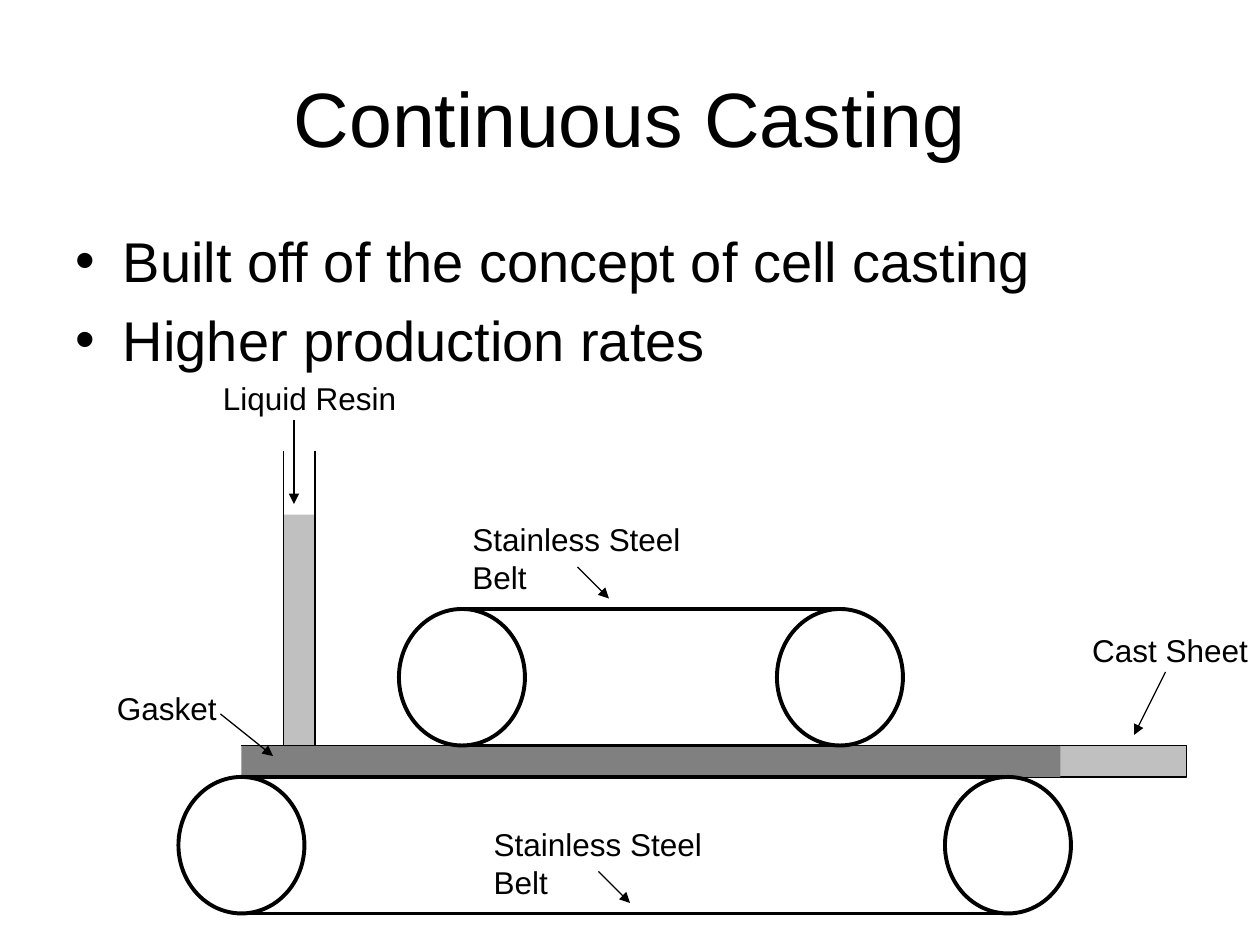
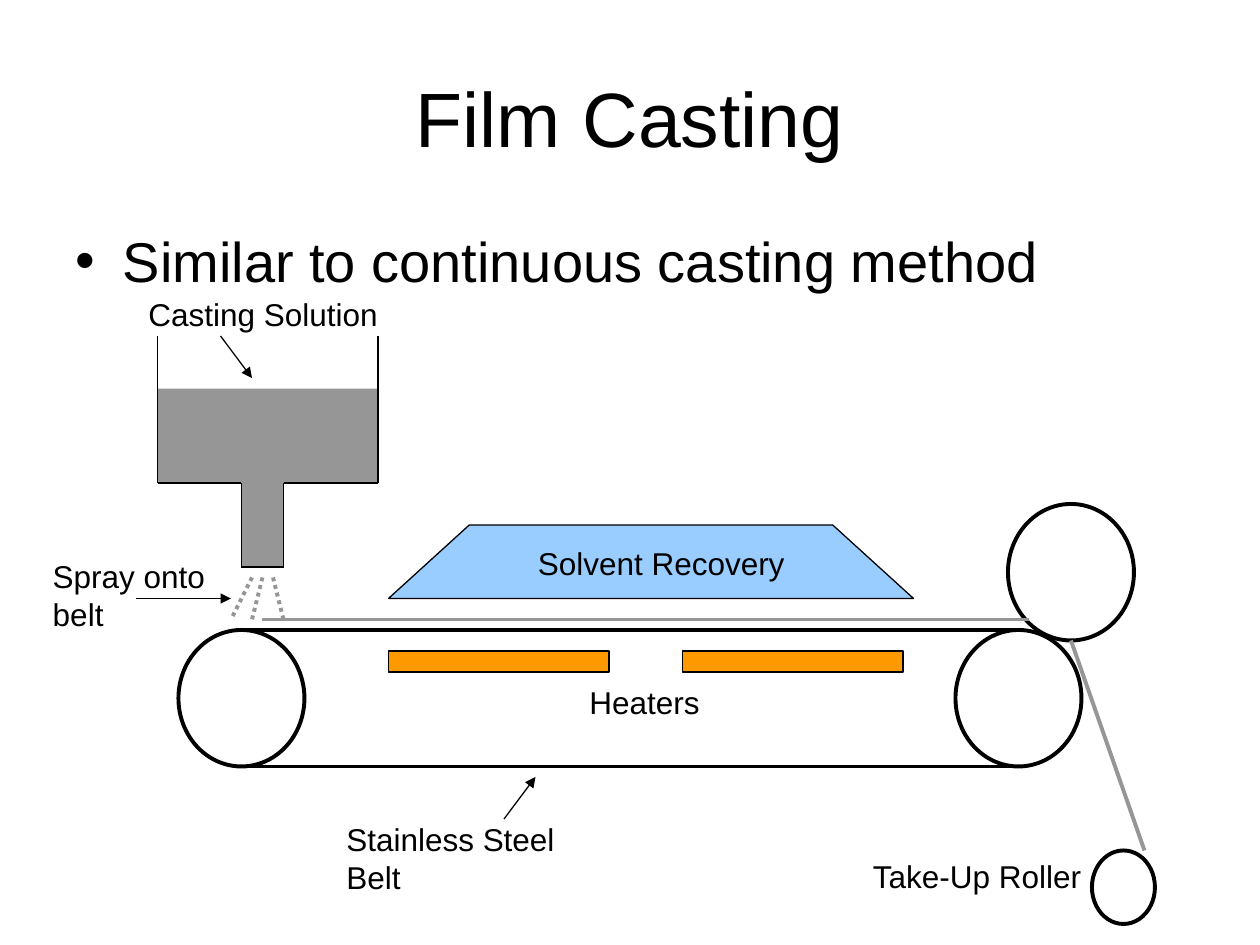
"""Build two slides on continuous casting and film casting of plastic sheet."""
from itertools import pairwise

from lxml import etree
from pptx import Presentation
from pptx.dml.color import RGBColor
from pptx.enum.dml import MSO_LINE
from pptx.enum.shapes import MSO_CONNECTOR, MSO_SHAPE
from pptx.enum.text import MSO_ANCHOR, MSO_AUTO_SIZE, PP_ALIGN
from pptx.oxml.ns import qn
from pptx.util import Emu, Inches, Pt

COLORS = {"ink": "000000", "resin": "C0C0C0", "gasket": "808080",
          "solution": "969696", "heater": "FF9900", "hood": "99CCFF"}
FONT = "Arial"
SLIDE_SIZE = (10, 7.5)
TITLE_BOX, BODY_BOX = (0.5, 0.3, 9, 1.25), (0.5, 1.75, 9, 4.95)
GRID = Inches(1) / 12
THIN, THICK = 0.75, 2.25
ROLLER = (12, 13)
HEATER = (21, 2)

# Diagram parts are in grid units (twelfths of an inch); labels are in inches.
SLIDES = [
    {
        "title": "Continuous Casting",
        "bullets": ["Built off of the concept of cell casting", "Higher production rates"],
        "blocks": [(96, 71, 17, 3, "resin", 1), (23, 71, 78, 3, "gasket", 0),
                   (27, 49, 3, 22, "resin", 0)],
        "rollers": [(17, 74, *ROLLER), (90, 74, *ROLLER),
                    (74, 58, *ROLLER), (38, 58, *ROLLER)],
        "belts": [[(44, 58), (80, 58)], [(44, 71), (80, 71)],
                  [(23, 74), (96, 74)], [(23, 87), (96, 87)]],
        "walls": [[(27, 71), (27, 43)], [(30, 71), (30, 43)], [(23, 71), (101, 71)]],
        "arrows": [[(28, 40), (28, 48)], [(21, 68), (26, 72)], [(55, 54), (58, 57)],
                   [(57, 83), (60, 86)], [(111, 64), (108, 70)]],
        "labels": [("Gasket", 0.83, 5.42, 0.99), ("Liquid Resin", 1.67, 2.96, 1.58),
                   ("Stainless Steel Belt", 3.65, 4.08, 2.35),
                   ("Stainless Steel Belt", 3.82, 6.5, 2.35),
                   ("Cast Sheet", 8.57, 4.96, 1.44)],
    },
    {
        "title": "Film Casting",
        "bullets": ["Similar to continuous casting method"],
        "blocks": [(15, 37, 21, 9, "solution", 0), (23, 46, 4, 8, "solution", 0),
                   (37, 62, *HEATER, "heater", THIN), (65, 62, *HEATER, "heater", THIN)],
        "rollers": [(17, 60, *ROLLER), (91, 60, *ROLLER), (96, 48, *ROLLER), (104, 81, 6, 7)],
        "belts": [[(23, 60), (97, 60)], [(23, 73), (97, 73)]],
        "film": [[(25, 59), (98, 59)], [(102, 61), (109, 81)]],
        "walls": [[(15, 32), (15, 46), (23, 46), (23, 54),
                   (27, 54), (27, 46), (36, 46), (36, 32)]],
        "spray": [[(24, 55), (22, 59)], [(25, 55), (24, 59)], [(26, 55), (27, 59)]],
        "hood": [(37, 57), (44.7, 50), (79.3, 50), (87, 57)],
        "arrows": [[(21, 32), (24, 36)], [(13, 57), (22, 57)], [(48, 78), (51, 74)]],
        "labels": [("Solvent Recovery", 4.17, 4.27, 2.16), ("Heaters", 4.58, 5.37, 1.08),
                   ("Casting Solution", 1.08, 2.29, 2.02),
                   ("Spray onto\nbelt", 0.32, 4.37, 1.41),
                   ("Stainless Steel Belt", 2.65, 6.46, 2.35),
                   ("Take-Up Roller", 6.83, 6.75, 1.88)],
    },
]
LINE_STYLES = {
    "belts": {"color": "ink", "width": THICK},
    "film": {"color": "solution", "width": THICK},
    "walls": {"color": "ink", "width": THIN},
    "spray": {"color": "solution", "width": THICK, "dash": MSO_LINE.ROUND_DOT},
    "arrows": {"color": "ink", "width": THIN, "arrow": True},
}


def rgb(name):
    return RGBColor.from_string(COLORS[name])


def units(*lengths):
    return [Emu(round(length * GRID)) for length in lengths]


def write(shape, text, size, **frame_format):
    frame = shape.text_frame
    for attribute, value in frame_format.items():
        setattr(frame, attribute, value)
    frame.text = text
    for paragraph in frame.paragraphs:
        for attribute, value in {"name": FONT, "size": Pt(size)}.items():
            setattr(paragraph.font, attribute, value)
        paragraph.font.color.rgb = rgb("ink")
    return frame


def place(shape, box):
    for attribute, value in zip(("left", "top", "width", "height"), box):
        setattr(shape, attribute, Inches(value))


def paint(shape, fill, width):
    shape.shadow.inherit = False
    if fill:
        shape.fill.solid()
        shape.fill.fore_color.rgb = rgb(fill)
    else:
        shape.fill.background()
    if width:
        shape.line.color.rgb = rgb("ink")
        shape.line.width = Pt(width)
    else:
        shape.line.fill.background()


def draw_line(slide, start, end, color, width, dash=None, arrow=False):
    connector = slide.shapes.add_connector(MSO_CONNECTOR.STRAIGHT, *units(*start, *end))
    connector.line.color.rgb = rgb(color)
    connector.line.width = Pt(width)
    if dash:
        connector.line.dash_style = dash
    properties = connector._element.spPr
    if arrow:
        etree.SubElement(properties.find(qn("a:ln")), qn("a:tailEnd"), type="triangle")
    etree.SubElement(properties, qn("a:effectLst"))


def draw_hood(slide, corners):
    first, *others = [units(*corner) for corner in corners]
    builder = slide.shapes.build_freeform(*first)
    builder.add_line_segments(others, close=True)
    paint(builder.convert_to_shape(), "hood", THIN)


def build_slide(deck, content):
    slide = deck.slides.add_slide(deck.slide_layouts[1])
    title, body = slide.placeholders
    place(title, TITLE_BOX)
    place(body, BODY_BOX)
    heading = write(title, content["title"], 44, vertical_anchor=MSO_ANCHOR.MIDDLE)
    heading.paragraphs[0].alignment = PP_ALIGN.CENTER
    write(body, "\n".join(content["bullets"]), 32)

    for *box, fill, width in content["blocks"]:
        paint(slide.shapes.add_shape(MSO_SHAPE.RECTANGLE, *units(*box)), fill, width)
    for box in content["rollers"]:
        paint(slide.shapes.add_shape(MSO_SHAPE.OVAL, *units(*box)), None, THICK)
    for part, style in LINE_STYLES.items():
        for route in content.get(part, []):
            for start, end in pairwise(route):
                draw_line(slide, start, end, **style)
    if "hood" in content:
        draw_hood(slide, content["hood"])
    for text, left, top, width in content["labels"]:
        height = 0.4 + 0.3 * text.count("\n")
        label = slide.shapes.add_textbox(*map(Inches, (left, top, width, height)))
        write(label, text, 18, word_wrap=False, auto_size=MSO_AUTO_SIZE.SHAPE_TO_FIT_TEXT)


def main():
    deck = Presentation()
    deck.slide_width, deck.slide_height = map(Inches, SLIDE_SIZE)
    for content in SLIDES:
        build_slide(deck, content)
    deck.save("out.pptx")


if __name__ == "__main__":
    main()
